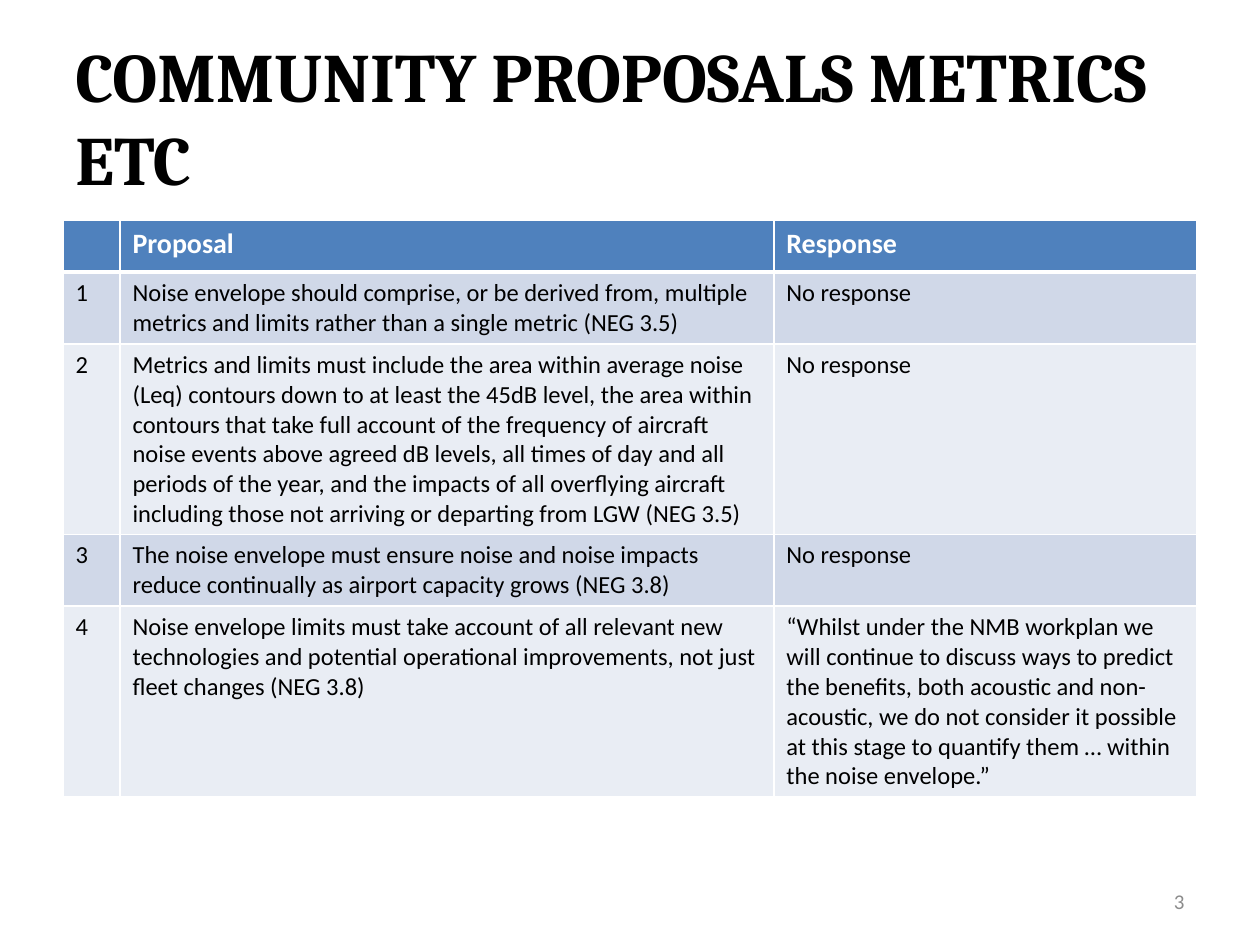
from lxml.etree import SubElement
from pptx import Presentation
from pptx.dml.color import RGBColor
from pptx.enum.text import MSO_ANCHOR, PP_ALIGN
from pptx.oxml.ns import qn
from pptx.util import Cm, Pt

WHITE, BLACK, GREY = "FFFFFF", "000000", "8C8C8C"
HEAD, BANDS = "4F81BD", ("D0D8E8", "E9EDF4")
WIDTHS = (1.15, 13.18, 8.53)
HEIGHTS = (1.03, 1.45, 3.84, 1.45, 3.84)
ROWS = (
    ("", "Proposal", "Response"),
    ("1", "Noise envelope should comprise, or be derived from, multiple metrics "
          "and limits rather than a single metric (NEG 3.5)", "No response"),
    ("2", "Metrics and limits must include the area within average noise (Leq) "
          "contours down to at least the 45dB level, the area within contours that "
          "take full account of the frequency of aircraft noise events above agreed "
          "dB levels, all times of day and all periods of the year, and the impacts "
          "of all overflying aircraft including those not arriving or departing "
          "from LGW (NEG 3.5)", "No response"),
    ("3", "The noise envelope must ensure noise and noise impacts reduce "
          "continually as airport capacity grows (NEG 3.8)", "No response"),
    ("4", "Noise envelope limits must take account of all relevant new technologies "
          "and potential operational improvements, not just fleet changes (NEG 3.8)",
     "“Whilst under the NMB workplan we will continue to discuss ways to predict "
     "the benefits, both acoustic and non-acoustic, we do not consider it possible "
     "at this stage to quantify them … within the noise envelope.”"),
)


def paint(color, value):
    color.rgb = RGBColor.from_string(value)


def write(frame, text, size, color, font="Calibri", bold=False):
    run = frame.paragraphs[0].add_run()
    run.text = text
    run.font.name, run.font.size, run.font.bold = font, Pt(size), bold
    paint(run.font.color, color)


def add_text(slide, box, text, size, color, align=PP_ALIGN.LEFT, **style):
    frame = slide.shapes.add_textbox(*map(Cm, box)).text_frame
    frame.word_wrap = True
    frame.vertical_anchor = MSO_ANCHOR.MIDDLE
    frame.paragraphs[0].alignment = align
    write(frame, text, size, color, **style)


def edge(cell, **sides):
    """Draw white borders; sides maps L, R, T and B to points, in that order."""
    props = cell._tc.get_or_add_tcPr()
    for side, width in sides.items():
        line = SubElement(props, qn(f"a:ln{side}"), w=str(Pt(width)))
        fill = SubElement(line, qn("a:solidFill"))
        SubElement(fill, qn("a:srgbClr"), val=WHITE)


def add_grid(slide, left, top):
    box = map(Cm, (left, top, sum(WIDTHS), sum(HEIGHTS)))
    table = slide.shapes.add_table(len(ROWS), len(WIDTHS), *box).table
    for col, width in zip(table.columns, WIDTHS):
        col.width = Cm(width)
    for i, (row, height, texts) in enumerate(zip(table.rows, HEIGHTS, ROWS)):
        row.height = Cm(height)
        head = i == 0
        for cell, text in zip(row.cells, texts):
            edge(cell, L=1, R=1, T=3 if i == 1 else 1, B=3 if head else 1)
            cell.fill.solid()
            paint(cell.fill.fore_color, HEAD if head else BANDS[(i - 1) % 2])
            if text:
                write(cell.text_frame, text, 16 if head else 14,
                      WHITE if head else BLACK, bold=head)


def main():
    deck = Presentation()
    deck.slide_width, deck.slide_height = Cm(25.4), Cm(19.05)
    slide = deck.slides.add_slide(deck.slide_layouts[6])
    add_text(slide, (1.27, 0.76, 22.86, 3.18), "COMMUNITY PROPOSALS METRICS ETC",
             39.6, BLACK, font="Cambria", bold=True)
    add_grid(slide, 1.27, 4.45)
    add_text(slide, (18.2, 17.66, 5.93, 1.01), "3", 12, GREY, PP_ALIGN.RIGHT)
    deck.save("out.pptx")


if __name__ == "__main__":
    main()
